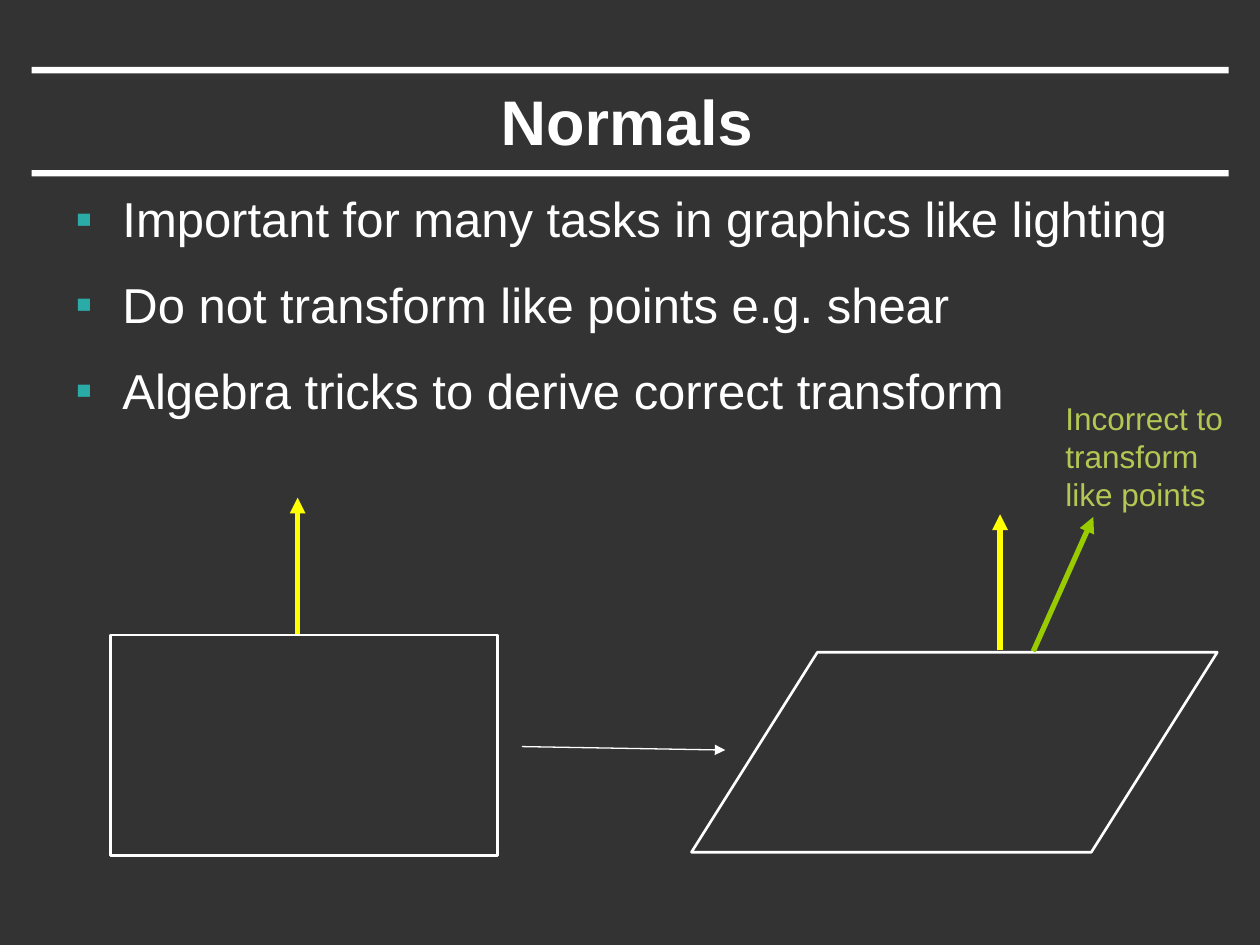
from lxml import etree
from pptx import Presentation
from pptx.dml.color import RGBColor
from pptx.enum import shapes as s, text as t
from pptx.oxml.ns import qn
from pptx.util import Cm, Pt

DARK = RGBColor(0x33, 0x33, 0x33)
WHITE = RGBColor(0xFF, 0xFF, 0xFF)
TEAL = RGBColor(0x2A, 0xAB, 0xA8)
YELLOW = RGBColor(0xFF, 0xFF, 0x00)
GREEN = RGBColor(0x99, 0xCC, 0x00)
OLIVE = RGBColor(0xB4, 0xC7, 0x53)

deck = Presentation()
deck.slide_width, deck.slide_height = Cm(25.4), Cm(19.05)
slide = deck.slides.add_slide(deck.slide_layouts[6])
slide.background.fill.solid()
slide.background.fill.fore_color.rgb = DARK


def add_text(box, lines, size, color, bold=False):
    """Add a text box at box (cm), one paragraph per line, and return its frame."""
    frame = slide.shapes.add_textbox(*map(Cm, box)).text_frame
    frame.word_wrap = True
    for i, line in enumerate(lines):
        par = frame.paragraphs[0] if i == 0 else frame.add_paragraph()
        run = par.add_run()
        run.text = line
        run.font.name = "Arial"
        run.font.size = Pt(size)
        run.font.bold = bold
        run.font.color.rgb = color
    return frame


# Title between two rules
for top in (1.35, 3.43):
    rule = slide.shapes.add_shape(
        s.MSO_SHAPE.RECTANGLE, Cm(0.64), Cm(top), Cm(24.13), Cm(0.13))
    rule.shadow.inherit = False
    rule.fill.solid()
    rule.fill.fore_color.rgb = WHITE
    rule.line.fill.background()

title = add_text((1.88, 1.47, 21.51, 1.9), ["Normals"], 36, WHITE, True)
title.vertical_anchor = t.MSO_ANCHOR.MIDDLE
title.paragraphs[0].alignment = t.PP_ALIGN.CENTER

# Bullets
body = add_text((1.27, 3.68, 22.86, 16.43), [
    "Important for many tasks in graphics like lighting",
    "Do not transform like points e.g. shear",
    "Algebra tricks to derive correct transform",
], 28, WHITE)
for i, par in enumerate(body.paragraphs):
    par.space_before = Pt(15.4 if i else 0)
    props = par._p.get_or_add_pPr()
    props.set("marL", str(Cm(0.95)))
    props.set("indent", str(-Cm(0.95)))
    tint = etree.SubElement(props, qn("a:buClr"))
    etree.SubElement(tint, qn("a:srgbClr"), val=str(TEAL))
    etree.SubElement(props, qn("a:buFont"), typeface="Arial")
    etree.SubElement(props, qn("a:buChar"), char="▪")

# Square outline and its sheared form
for kind, box in (
    (s.MSO_SHAPE.RECTANGLE, (2.23, 12.8, 7.8, 4.45)),
    (s.MSO_SHAPE.PARALLELOGRAM, (13.94, 13.15, 10.6, 4.03)),
):
    form = slide.shapes.add_shape(kind, *map(Cm, box))
    form.shadow.inherit = False
    form.fill.background()
    form.line.color.rgb = WHITE
    form.line.width = Pt(1.5)
    if kind == s.MSO_SHAPE.PARALLELOGRAM:
        form.adjustments[0] = 0.63

# Shear arrow, then the normals
for ends, color, width in (
    ((10.52, 15.05, 14.62, 15.12), WHITE, 0.75),
    ((6, 12.78, 6, 10.03), YELLOW, 3),
    ((20.16, 13.11, 20.16, 10.37), YELLOW, 3),
    ((20.83, 13.13, 22.04, 10.42), GREEN, 3),
):
    arrow = slide.shapes.add_connector(s.MSO_CONNECTOR.STRAIGHT, *map(Cm, ends))
    arrow.line.color.rgb = color
    arrow.line.width = Pt(width)
    etree.SubElement(arrow.line._get_or_add_ln(), qn("a:tailEnd"), type="triangle")
    etree.SubElement(arrow._element.spPr, qn("a:effectLst"))

note = add_text((21.23, 7.92, 3.71, 2.57),
                ["Incorrect to", "transform", "like points"], 18, OLIVE)
note.word_wrap = False
note.auto_size = t.MSO_AUTO_SIZE.SHAPE_TO_FIT_TEXT

deck.save("out.pptx")
